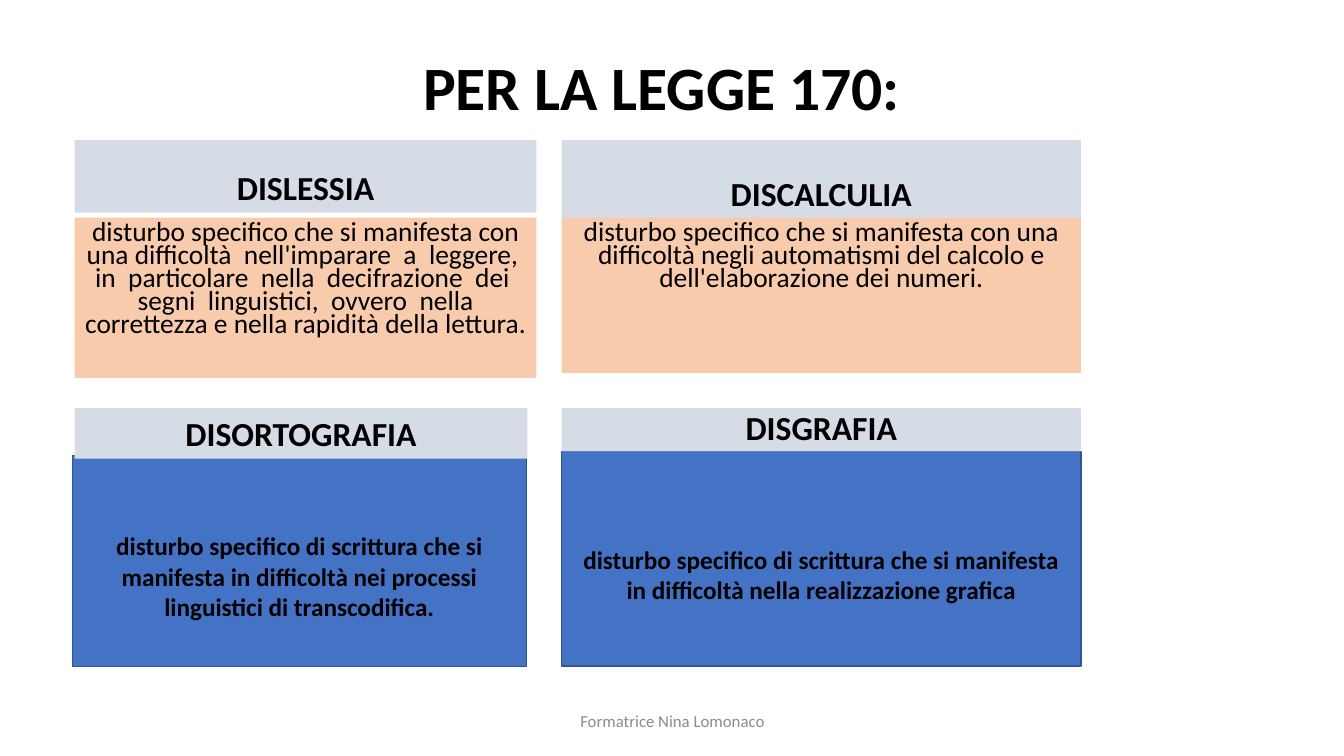
from pptx import Presentation
from pptx.dml.color import RGBColor
from pptx.enum.shapes import MSO_SHAPE
from pptx.enum.text import MSO_ANCHOR, PP_ALIGN
from pptx.util import Inches, Pt


def paint(color, value):
    color.rgb = RGBColor.from_string(value)


def write(shape, text, size, bold, color, anchor, spacing=1, before=0):
    frame = shape.text_frame
    frame.word_wrap = True
    frame.vertical_anchor = anchor
    line = frame.paragraphs[0]
    line.text = text
    line.alignment = PP_ALIGN.CENTER
    line.line_spacing = spacing
    line.space_before = Pt(before)
    line.font.name = "Calibri"
    line.font.size = Pt(size)
    line.font.bold = bold
    paint(line.font.color, color)


deck = Presentation()
deck.slide_width = Inches(13.33)
deck.slide_height = Inches(7.5)
slide = deck.slides.add_slide(deck.slide_layouts[6])

TOP, MID, LOW = MSO_ANCHOR.TOP, MSO_ANCHOR.MIDDLE, MSO_ANCHOR.BOTTOM
labels = [
    (0.72, 0.4, 11.69, 0.99, "PER LA LEGGE 170:", 44, True, "000000", 0.9),
    (4.42, 6.95, 4.5, 0.4, "Formatrice Nina Lomonaco", 12, False, "8C8C8C", 1),
]
for x, y, w, h, text, size, bold, color, spacing in labels:
    box = slide.shapes.add_textbox(Inches(x), Inches(y), Inches(w), Inches(h))
    write(box, text, size, bold, color, MID, spacing)

styles = {
    "peach": ("F8CBAD", 19.6, False, TOP, 0.7, 10),
    "blue": ("4472C4", 18, True, MID, 1, 0),
    "head": ("D6DCE5", 24, True, LOW, 0.9, 10),
    "tight": ("D6DCE5", 24, True, LOW, 0.8, 10),
}
panels = [
    ("head", 0.74, 1.39, 4.58, 0.72, "DISLESSIA"),
    ("head", 5.57, 1.39, 5.15, 0.78, "DISCALCULIA"),
    ("peach", 0.74, 2.16, 4.58, 1.59,
     "disturbo specifico che si manifesta con una difficoltà  nell'imparare  a  leggere,  "
     "in  particolare  nella  decifrazione  dei  segni  linguistici,  ovvero  nella "
     "correttezza e nella rapidità della lettura."),
    ("peach", 5.57, 2.16, 5.15, 1.54,
     "disturbo specifico che si manifesta con una difficoltà negli automatismi "
     "del calcolo e dell'elaborazione dei numeri."),
    ("blue", 0.72, 4.52, 4.5, 2.09,
     "disturbo specifico di scrittura che si manifesta in difficoltà nei processi "
     "linguistici di transcodifica."),
    ("blue", 5.57, 4.48, 5.15, 2.13,
     "disturbo specifico di scrittura che si manifesta in difficoltà "
     "nella realizzazione grafica"),
    ("tight", 5.57, 4.05, 5.15, 0.43, "DISGRAFIA"),
    ("head", 0.74, 4.05, 4.49, 0.5, "DISORTOGRAFIA"),
]
for style, x, y, w, h, text in panels:
    fill, size, bold, anchor, spacing, before = styles[style]
    panel = slide.shapes.add_shape(
        MSO_SHAPE.RECTANGLE, Inches(x), Inches(y), Inches(w), Inches(h))
    panel.shadow.inherit = False
    panel.fill.solid()
    paint(panel.fill.fore_color, fill)
    if style == "blue":
        paint(panel.line.color, "325491")
        panel.line.width = Pt(1)
        panel.text_frame.margin_top = Inches(0.35)
    else:
        panel.line.fill.background()
    write(panel, text, size, bold, "000000", anchor, spacing, before)

deck.save("out.pptx")
